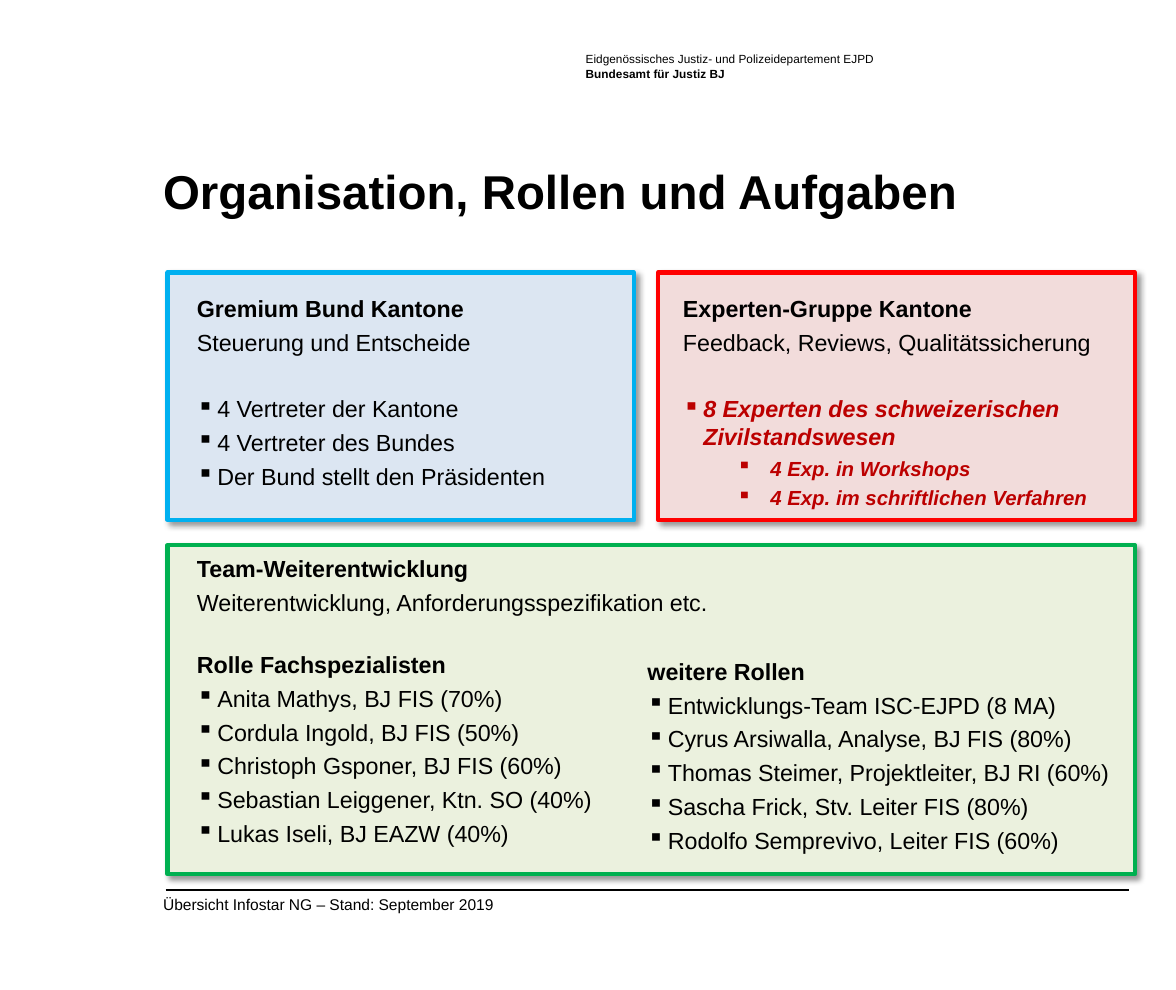
from lxml.etree import SubElement
from pptx import Presentation
from pptx.dml.color import RGBColor
from pptx.enum.shapes import MSO_CONNECTOR, MSO_SHAPE
from pptx.oxml.ns import qn
from pptx.util import Pt

COLORS = {
    "black": "000000",
    "dark_red": "BC0000",
    "blue": "00B0F0", "pale_blue": "DCE6F2",
    "red": "FF0000", "pale_red": "F2DCDB",
    "green": "00B050", "pale_green": "EBF1DE",
}
HEADING = {"bold": True}
PLAIN = {}
BULLET = {"indent": (14, -14)}
GAP_BULLET = {"indent": (14, -14), "before": 26.5}
EXPERT = {"bold": True, "italic": True, "color": "dark_red"}
EXPERT_SUB = {**EXPERT, "size": 14, "indent": (60, -23), "before": 3.5}

prs = Presentation()
prs.slide_width, prs.slide_height = Pt(808), Pt(680)
slide = prs.slides.add_slide(prs.slide_layouts[6])


def add_panel(left, top, width, height, fill, border):
    panel = slide.shapes.add_shape(
        MSO_SHAPE.RECTANGLE, Pt(left), Pt(top), Pt(width), Pt(height))
    panel.fill.solid()
    panel.fill.fore_color.rgb = RGBColor.from_string(COLORS[fill])
    panel.line.color.rgb = RGBColor.from_string(COLORS[border])
    panel.line.width = Pt(3)
    panel.shadow.inherit = False
    effects = panel._element.spPr.find(qn("a:effectLst"))
    shadow = SubElement(effects, qn("a:outerShdw"), blurRad=str(Pt(4)),
                        dist=str(Pt(3)), dir="2700000", algn="tl", rotWithShape="0")
    shade = SubElement(shadow, qn("a:srgbClr"), val=COLORS["black"])
    SubElement(shade, qn("a:alpha"), val="40000")


def add_text(left, top, width, height, lines, size=16, before=4, spacing=None):
    frame = slide.shapes.add_textbox(
        Pt(left), Pt(top), Pt(width), Pt(height)).text_frame
    frame.word_wrap = True
    for number, (text, style) in enumerate(lines):
        paragraph = frame.add_paragraph() if number else frame.paragraphs[0]
        if "indent" in style:
            margin, hanging = style["indent"]
            properties = paragraph._p.get_or_add_pPr()
            properties.set("marL", str(Pt(margin)))
            properties.set("indent", str(Pt(hanging)))
            SubElement(properties, qn("a:buChar"), char="▪")
        if number:
            paragraph.space_before = Pt(style.get("before", before))
        if spacing:
            paragraph.line_spacing = spacing
        run = paragraph.add_run()
        run.text = text
        run.font.name = "Arial"
        run.font.size = Pt(style.get("size", size))
        run.font.bold = style.get("bold", False)
        run.font.italic = style.get("italic", False)
        run.font.color.rgb = RGBColor.from_string(COLORS[style.get("color", "black")])


add_text(395.3, 31.7, 379, 47, [
    ("Eidgenössisches Justiz- und Polizeidepartement EJPD", PLAIN),
    ("Bundesamt für Justiz BJ", HEADING),
], size=8.1, before=0, spacing=1.05)
add_text(105, 108, 667, 66, [("Organisation, Rollen und Aufgaben", HEADING)], size=32.6)

footer_rule = slide.shapes.add_connector(
    MSO_CONNECTOR.STRAIGHT, Pt(113.8), Pt(611.3), Pt(776), Pt(611.3))
footer_rule.line.color.rgb = RGBColor.from_string(COLORS["black"])
footer_rule.line.width = Pt(0.75)
SubElement(footer_rule._element.spPr, qn("a:effectLst"))
add_text(105, 611.3, 571, 20, [
    ("Übersicht Infostar NG – Stand: September 2019", PLAIN)], size=10.7)

add_panel(115.2, 374.4, 664.6, 226, "pale_green", "green")
add_panel(115.2, 187.2, 320.4, 170, "pale_blue", "blue")
add_panel(452.2, 187.2, 327.6, 170, "pale_red", "red")

add_text(128.2, 198.7, 300, 150, [
    ("Gremium Bund Kantone", HEADING),
    ("Steuerung und Entscheide", PLAIN),
    ("4 Vertreter der Kantone", GAP_BULLET),
    ("4 Vertreter des Bundes", BULLET),
    ("Der Bund stellt den Präsidenten", BULLET),
])
add_text(462.2, 198.7, 308, 155, [
    ("Experten-Gruppe Kantone", HEADING),
    ("Feedback, Reviews, Qualitätssicherung", PLAIN),
    ("8 Experten des schweizerischen Zivilstandswesen", {**EXPERT, **GAP_BULLET}),
    ("4 Exp. in Workshops", EXPERT_SUB),
    ("4 Exp. im schriftlichen Verfahren", EXPERT_SUB),
])
add_text(128.2, 377.3, 394, 212, [
    ("Team-Weiterentwicklung", HEADING),
    ("Weiterentwicklung, Anforderungsspezifikation etc.", PLAIN),
    ("Rolle Fachspezialisten", {**HEADING, "before": 23.5}),
    ("Anita Mathys, BJ FIS (70%)", BULLET),
    ("Cordula Ingold, BJ FIS (50%)", BULLET),
    ("Christoph Gsponer, BJ FIS (60%)", BULLET),
    ("Sebastian Leiggener, Ktn. SO (40%)", BULLET),
    ("Lukas Iseli, BJ EAZW (40%)", BULLET),
])
add_text(437.8, 447.8, 340, 142, [
    ("weitere Rollen", HEADING),
    ("Entwicklungs-Team ISC-EJPD (8 MA)", BULLET),
    ("Cyrus Arsiwalla, Analyse, BJ FIS (80%)", BULLET),
    ("Thomas Steimer, Projektleiter, BJ RI (60%)", BULLET),
    ("Sascha Frick, Stv. Leiter FIS (80%)", BULLET),
    ("Rodolfo Semprevivo, Leiter FIS (60%)", BULLET),
])

prs.save("out.pptx")
